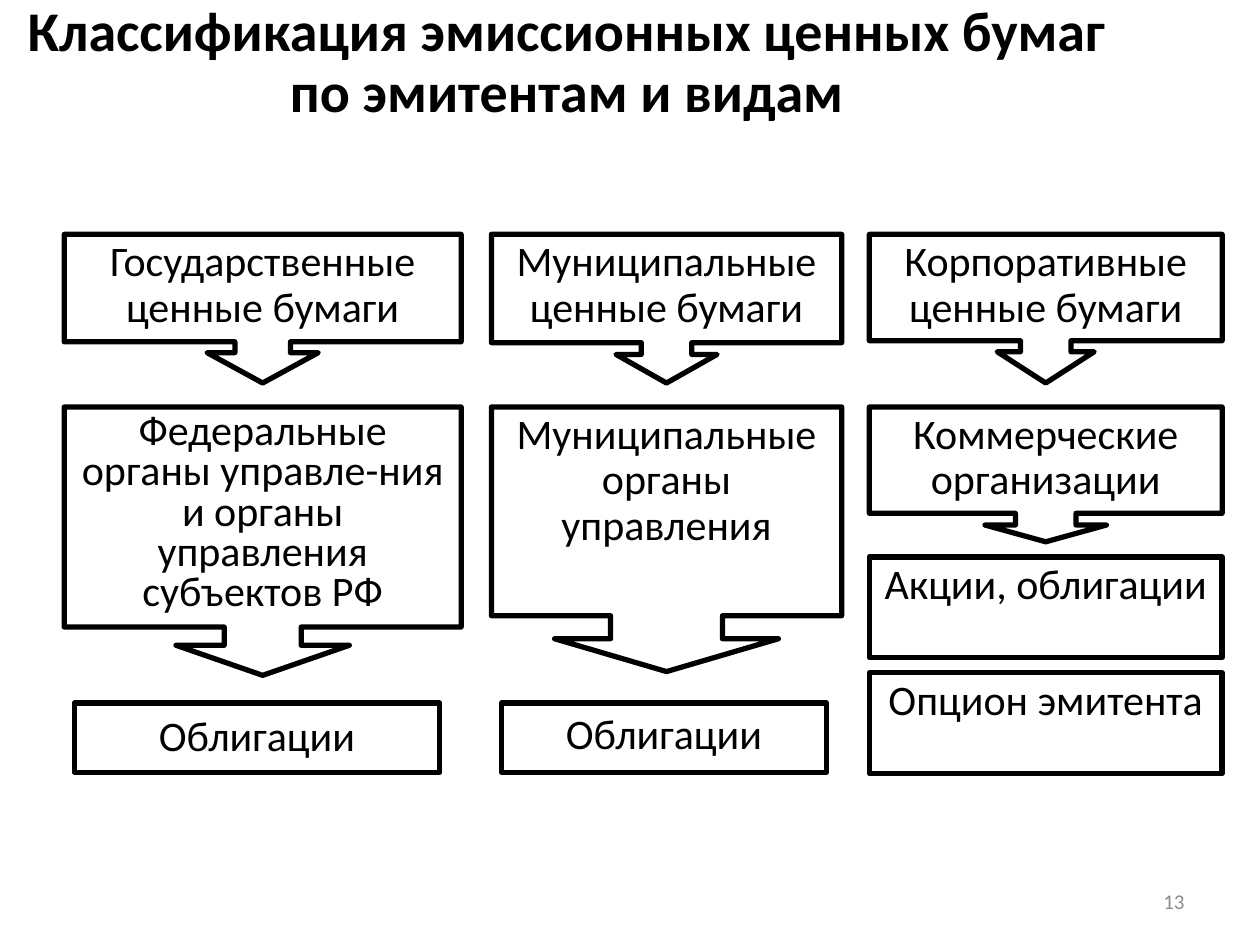
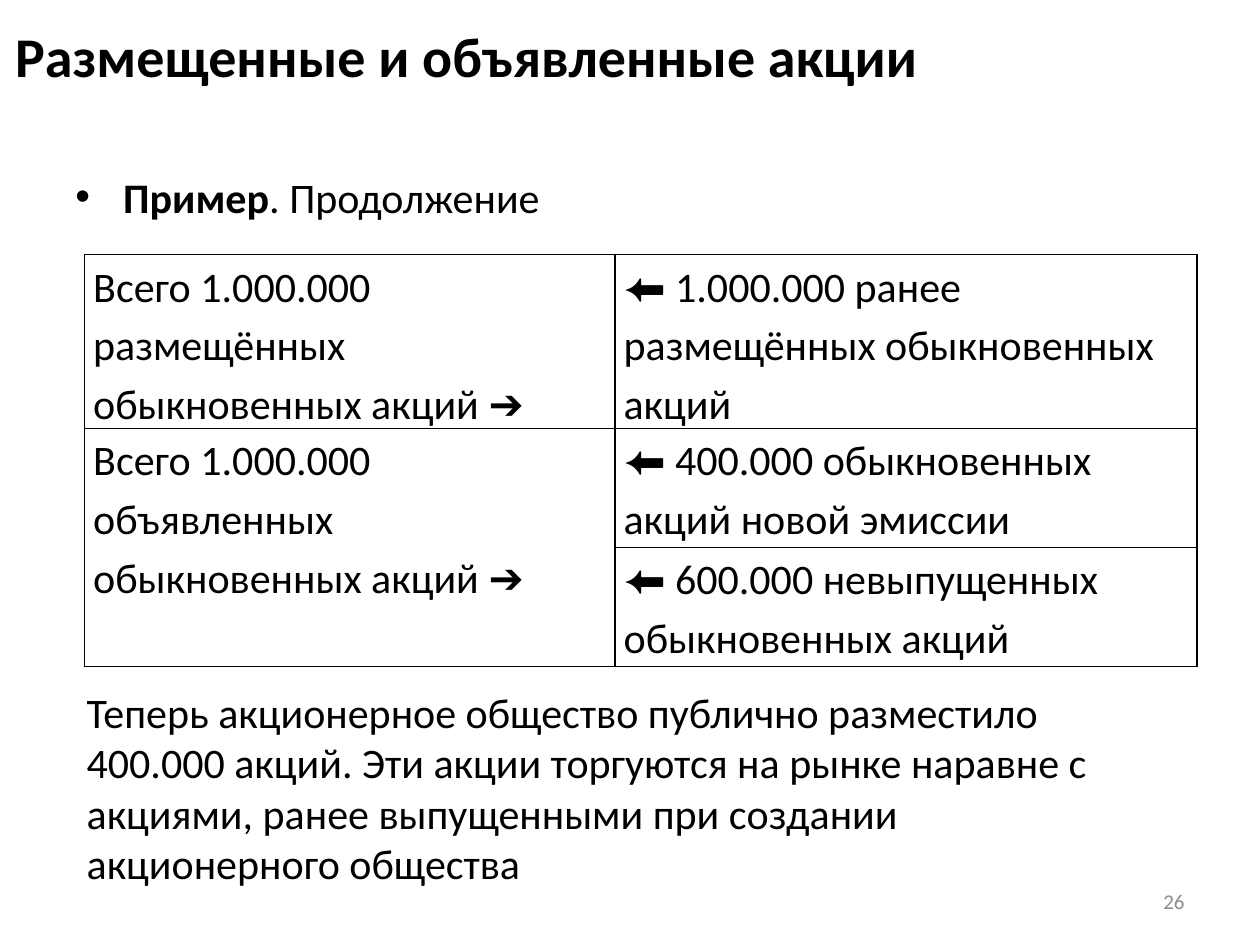
import pptx
import pptx.dml.color
import pptx.enum.shapes
import pptx.enum.text
import pptx.oxml
import pptx.oxml.ns
import pptx.util

ALIGN = pptx.enum.text.PP_ALIGN
ANCHOR = pptx.enum.text.MSO_ANCHOR
SHAPE = pptx.enum.shapes.MSO_SHAPE
WIDTH = pptx.util.Inches(10)
HEIGHT = pptx.util.Inches(7.5)
FONT = "Calibri"
INK = "000000"
MUTED = "8C8C8C"
COLUMN_LEFTS = (5.1, 39, 69)
COLUMN_WIDTHS = (31.5, 27.8, 28)
HEADING_TOP, ISSUER_TOP, SECURITY_TOP = 24.8, 43.07, 74.4


def color(value):
    return pptx.dml.color.RGBColor.from_string(value)


def across(share):
    return round(WIDTH * share / 100)


def down(share):
    return round(HEIGHT * share / 100)


def area(left, top, width, height):
    return across(left), down(top), across(width), down(height)


def write(frame, *pieces, size=24, ink=INK, bold=(), align=ALIGN.LEFT,
          anchor=ANCHOR.TOP, spacing=1.0, before=0, after=0):
    frame.word_wrap = True
    frame.vertical_anchor = anchor
    paragraph = frame.paragraphs[0]
    paragraph.alignment = align
    paragraph.line_spacing = spacing
    paragraph.space_before = pptx.util.Pt(before)
    paragraph.space_after = pptx.util.Pt(after)
    for index, piece in enumerate(pieces):
        run = paragraph.add_run()
        run.text = piece
        run.font.name = FONT
        run.font.size = pptx.util.Pt(size)
        run.font.bold = index in bold
        run.font.color.rgb = color(ink)
    return paragraph


def add_text(slide, place, *pieces, **style):
    box = slide.shapes.add_textbox(*area(*place))
    write(box.text_frame, *pieces, **style)
    return box


def add_bullet(paragraph, indent):
    properties = paragraph._p.get_or_add_pPr()
    properties.set("marL", str(indent))
    properties.set("indent", str(-indent))
    namespace = pptx.oxml.ns.nsdecls("a")
    for tag in ('buFont {} typeface="Arial"', 'buChar {} char="•"'):
        properties.append(pptx.oxml.parse_xml(f"<a:{tag.format(namespace)}/>"))


def add_titled_slide(presentation, title, number, place, align):
    slide = presentation.slides.add_slide(presentation.slide_layouts[5])
    shape = slide.shapes.title
    shape.left, shape.top, shape.width, shape.height = area(*place)
    shape.text_frame.auto_size = pptx.enum.text.MSO_AUTO_SIZE.NONE
    write(shape.text_frame, title, size=32, bold=(0,), align=align,
          anchor=ANCHOR.MIDDLE, spacing=0.9, after=6)
    add_text(slide, (71.7, 92.67, 23.3, 5.33), number, size=12, ink=MUTED,
             align=ALIGN.RIGHT, anchor=ANCHOR.MIDDLE)
    return slide


def add_box(slide, place, text, kind=SHAPE.RECTANGLE, adjustments=(),
            spacing=0.9, anchor=ANCHOR.TOP):
    shape = slide.shapes.add_shape(kind, *area(*place))
    for index, value in enumerate(adjustments):
        shape.adjustments[index] = value
    shape.shadow.inherit = False
    shape.fill.background()
    shape.line.color.rgb = color(INK)
    shape.line.width = pptx.util.Pt(3)
    write(shape.text_frame, text, align=ALIGN.CENTER, anchor=anchor,
          spacing=spacing)


def add_callout_row(slide, top, callouts):
    for left, width, (text, height, spacing, adjustments) in zip(
            COLUMN_LEFTS, COLUMN_WIDTHS, callouts):
        add_box(slide, (left, top, width, height), text,
                SHAPE.DOWN_ARROW_CALLOUT, adjustments, spacing)


def outline_cell(cell):
    properties = cell._tc.get_or_add_tcPr()
    namespace = pptx.oxml.ns.nsdecls("a")
    for side in "LRTB":
        properties.append(pptx.oxml.parse_xml(
            f'<a:ln{side} {namespace} w="12700"><a:solidFill>'
            f'<a:srgbClr val="{INK}"/></a:solidFill></a:ln{side}>'))
    cell.fill.background()


def add_share_table(slide, place, columns, rows, texts):
    table = slide.shapes.add_table(
        len(rows), len(columns), *area(*place)).table
    table.first_row = table.horz_banding = False
    for column, share in zip(table.columns, columns):
        column.width = across(share)
    for row, share in zip(table.rows, rows):
        row.height = down(share)
    for cell in table.iter_cells():
        outline_cell(cell)
    table.cell(1, 0).merge(table.cell(2, 0))
    for (row, column), text in texts.items():
        cell = table.cell(row, column)
        cell.margin_left = cell.margin_right = pptx.util.Inches(0.07)
        cell.margin_top = cell.margin_bottom = 0
        write(cell.text_frame, text, spacing=1.15)


def build_classification(presentation):
    slide = add_titled_slide(
        presentation,
        "Классификация эмиссионных ценных бумаг по эмитентам и видам",
        "13", (0, 0, 90, 13.47), ALIGN.CENTER)
    add_callout_row(slide, HEADING_TOP, (
        ("Государственные ценные бумаги", 15.73, 0.9,
         (0.374, 0.374, 0.204, 0.723)),
        ("Муниципальные ценные бумаги", 15.73, 0.9,
         (0.34, 0.34, 0.192, 0.729)),
        ("Корпоративные ценные бумаги", 15.73, 0.9,
         (0.34, 0.326, 0.21, 0.716))))
    add_callout_row(slide, ISSUER_TOP, (
        ("Федеральные органы управле-ния и органы управления субъектов РФ",
         28.4, 0.8, (0.287, 0.323, 0.112, 0.82)),
        ("Муниципальные органы управления", 28, 0.9,
         (0.423, 0.423, 0.124, 0.789)),
        ("Коммерческие организации", 14.27, 0.9,
         (0.45, 0.45, 0.124, 0.789))))
    for left, width, spacing in ((5.9, 29, 0.9), (39.8, 25.8, 0.8)):
        add_box(slide, (left, SECURITY_TOP, width, 7.33), "Облигации",
                spacing=spacing, anchor=ANCHOR.MIDDLE)
    for index, text in enumerate(("Акции, облигации", "Опцион эмитента")):
        top = 58.93 + index * 12.27
        add_box(slide, (COLUMN_LEFTS[2], top, COLUMN_WIDTHS[2], 10.67), text)


def build_share_example(presentation):
    slide = add_titled_slide(
        presentation, "Размещенные и объявленные акции", "26",
        (0.2, 0.13, 90, 12.4), ALIGN.LEFT)
    example = add_text(slide, (5, 17.47, 90, 8.4), "Пример", ". Продолжение",
                       bold=(0,), before=4.8)
    add_bullet(example.text_frame.paragraphs[0], pptx.util.Inches(0.38))
    add_share_table(
        slide, (6.7, 26.93, 88.3, 43.6), (42.1, 46.2), (18.4, 12.6, 12.6), {
            (0, 0): "Всего 1.000.000 размещённых обыкновенных акций ➔",
            (0, 1): "⬅ 1.000.000 ранее размещённых обыкновенных акций",
            (1, 0): "Всего 1.000.000 объявленных обыкновенных акций ➔",
            (1, 1): "⬅ 400.000 обыкновенных акций новой эмиссии",
            (2, 1): "⬅ 600.000 невыпущенных обыкновенных акций"})
    conclusion = add_text(
        slide, (5.9, 72, 87.4, 22.93),
        "Теперь акционерное общество публично разместило 400.000 акций. "
        "Эти акции торгуются на рынке наравне с акциями, ранее выпущенными "
        "при создании акционерного общества")
    conclusion.text_frame.margin_right = pptx.util.Inches(0.25)


def main():
    presentation = pptx.Presentation()
    presentation.slide_width = WIDTH
    presentation.slide_height = HEIGHT
    build_classification(presentation)
    build_share_example(presentation)
    presentation.save("out.pptx")


if __name__ == "__main__":
    main()
